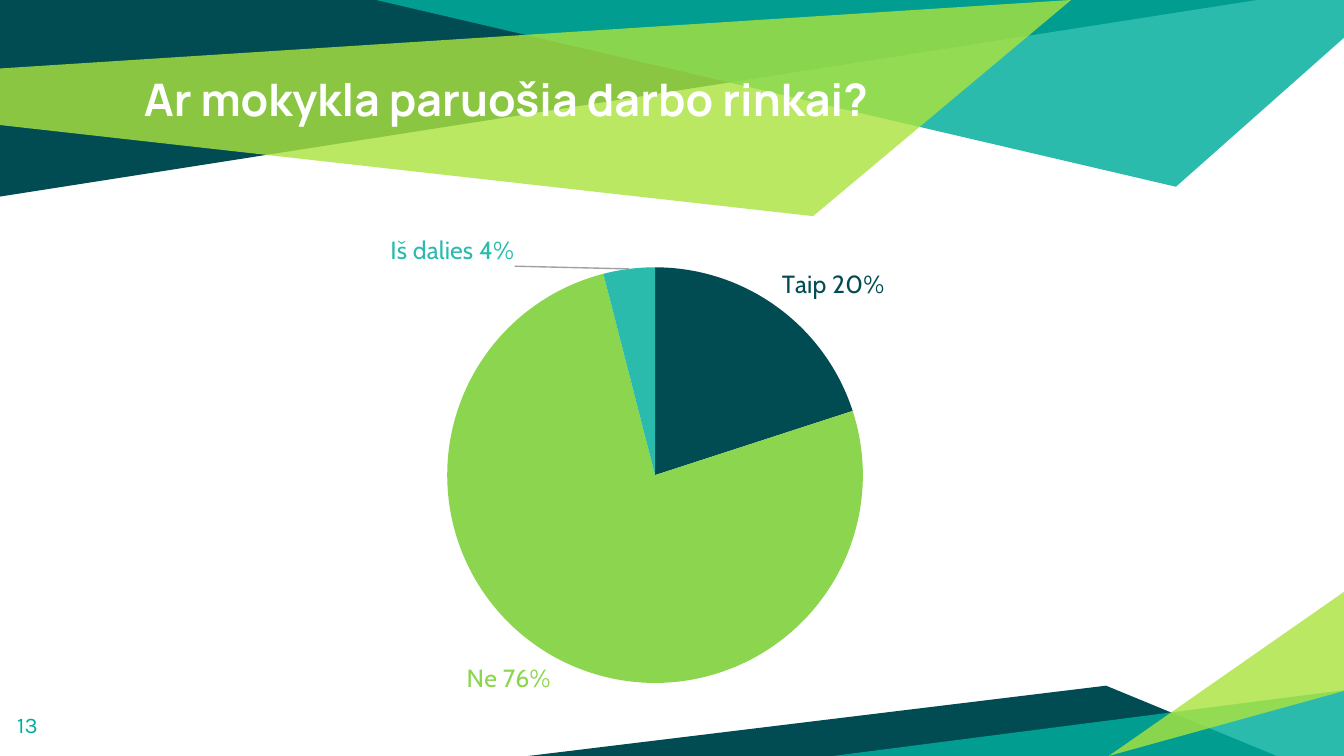
from dataclasses import dataclass

from lxml import etree
from pptx import Presentation
from pptx import util as u
from pptx.chart.data import CategoryChartData
from pptx.dml.color import RGBColor
from pptx.enum import chart as charts
from pptx.enum import text
from pptx.oxml import parse_xml
from pptx.oxml.ns import nsdecls, qn

WIDTH = u.Inches(10)
HEIGHT = u.Emu(WIDTH * 9 // 16)
PETROL = RGBColor(0x00, 0x4C, 0x52)
TEAL = RGBColor(0x00, 0xAE, 0x9D)
LIME = RGBColor(0xAB, 0xE3, 0x3F)
GREEN = RGBColor(0x8B, 0xD6, 0x4E)
AQUA = RGBColor(0x2A, 0xBB, 0xAD)
WHITE = RGBColor(0xFF, 0xFF, 0xFF)
GRAY = RGBColor(0xA0, 0xA0, 0xA0)


@dataclass(frozen=True)
class Box:
    """Percentages of the slide's width and height."""
    left: float
    top: float
    width: float
    height: float

    def lengths(self) -> tuple:
        return (across(self.left), down(self.top),
                across(self.width), down(self.height))


@dataclass(frozen=True)
class Facet:
    """Corners in percentages of the slide's width and height."""
    corners: tuple
    color: RGBColor
    opacity: int = 100


@dataclass(frozen=True)
class Slice:
    name: str
    percent: int
    color: RGBColor
    label_shift: tuple = ()


FACETS = (
    Facet(((0, 0), (0, 26), (93.5, 0)), PETROL),
    Facet(((28, 0), (87.5, 24.7), (100, 5), (100, 0)), TEAL, 83),
    Facet(((0, 9.07), (0, 16.55), (60.5, 28.6), (79.7, 0)), LIME, 81),
    Facet(((39.3, 100), (95, 100), (82.3, 90.7)), PETROL),
    Facet(((100, 91.3), (100, 100), (62, 100)), TEAL, 83),
    Facet(((100, 91.4), (100, 78.3), (82.5, 100)), LIME, 81),
)
SLICES = (
    Slice("Taip", 20, PETROL),
    Slice("Ne", 76, GREEN),
    Slice("Iš dalies", 4, AQUA, (-0.14, 0.01)),
)
TITLE_BOX = Box(9.7, 7.75, 80.6, 16.7)
NUMBER_BOX = Box(0.3, 92.35, 6, 7.65)
CHART_BOX = Box(19.8, 27.9, 60.3, 67.9)


def across(percent: float) -> int:
    return round(WIDTH * percent / 100)


def down(percent: float) -> int:
    return round(HEIGHT * percent / 100)


def set_font(font, name: str, size: float, color: RGBColor, bold: bool = False) -> None:
    font.name, font.size, font.bold = name, u.Pt(size), bold
    font.color.rgb = color


def draw_facet(slide, facet: Facet) -> None:
    points = [(across(x), down(y)) for x, y in facet.corners]
    builder = slide.shapes.build_freeform(*points[0])
    builder.add_line_segments(points[1:], close=True)
    shape = builder.convert_to_shape()
    shape.shadow.inherit = False
    shape.line.fill.background()
    shape.fill.solid()
    shape.fill.fore_color.rgb = facet.color
    if facet.opacity < 100:
        color = shape.fill._xPr.find(qn("a:solidFill"))[0]
        etree.SubElement(color, qn("a:alpha"), val=str(facet.opacity * 1000))


def write_text(shape, box: Box, words: str, **font) -> None:
    shape.left, shape.top, shape.width, shape.height = box.lengths()
    frame = shape.text_frame
    frame.text = words
    frame.word_wrap = True
    frame.auto_size = text.MSO_AUTO_SIZE.NONE
    frame.vertical_anchor = text.MSO_ANCHOR.TOP
    frame.margin_left = frame.margin_right = u.Inches(0.1)
    frame.margin_top = frame.margin_bottom = u.Inches(0.1)
    paragraph = frame.paragraphs[0]
    paragraph.alignment = text.PP_ALIGN.LEFT
    set_font(paragraph.font, **font)


def manual_layout(**settings):
    children = "".join(f'<c:{name} val="{value}"/>' for name, value in settings.items())
    return parse_xml(f'<c:layout {nsdecls("c")}><c:manualLayout>'
                     f'{children}</c:manualLayout></c:layout>')


def leader_lines(color: RGBColor):
    return parse_xml(f'<c:leaderLines {nsdecls("c", "a")}><c:spPr><a:ln w="9525">'
                     f'<a:solidFill><a:srgbClr val="{color}"/></a:solidFill>'
                     '</a:ln></c:spPr></c:leaderLines>')


def draw_pie(slide, box: Box, slices: tuple) -> None:
    data = CategoryChartData()
    data.categories = [part.name for part in slices]
    data.add_series("Series 1", [part.percent for part in slices])
    chart = slide.shapes.add_chart(
        charts.XL_CHART_TYPE.PIE, *box.lengths(), data).chart
    chart.has_legend = chart.has_title = False
    chart.font.name, chart.font.size = "Cabin", u.Pt(10)
    plot = chart.plots[0]
    plot.vary_by_categories = True
    series = plot.series[0]
    labels = series.data_labels
    labels.show_category_name = True
    labels.show_value = False
    labels.position = charts.XL_LABEL_POSITION.OUTSIDE_END
    set_font(labels.font, "Cabin", 13.3, GREEN)
    labels._element.append(leader_lines(GRAY))
    for index, part in enumerate(slices):
        point = series.points[index]
        point.format.fill.solid()
        point.format.fill.fore_color.rgb = part.color
        label = point.data_label
        label.text_frame.text = f"{part.name} {part.percent}%"
        set_font(label.text_frame.paragraphs[0].runs[0].font, "Cabin", 13.3, part.color)
        label.position = charts.XL_LABEL_POSITION.OUTSIDE_END
        if part.label_shift:
            x, y = part.label_shift
            element = label._get_or_add_dLbl()
            element.find(qn("c:idx")).addnext(manual_layout(x=x, y=y))
    area = chart._chartSpace.chart.plotArea
    for layout in area.findall(qn("c:layout")):
        area.remove(layout)
    area.insert(0, manual_layout(layoutTarget="inner", xMode="edge", yMode="edge",
                                 x=0.22, y=0.11, w=0.52, h=0.81))


def main() -> None:
    presentation = Presentation()
    presentation.slide_width, presentation.slide_height = WIDTH, HEIGHT
    slide = presentation.slides.add_slide(presentation.slide_layouts[5])
    for facet in FACETS:
        draw_facet(slide, facet)
    title = slide.shapes.title
    slide.shapes._spTree.append(title._element)
    write_text(title, TITLE_BOX, "Ar mokykla paruošia darbo rinkai?",
               name="Manrope", size=24, color=WHITE, bold=True)
    number = slide.shapes.add_textbox(*NUMBER_BOX.lengths())
    write_text(number, NUMBER_BOX, "13", name="Karla", size=12, color=TEAL)
    draw_pie(slide, CHART_BOX, SLICES)
    presentation.save("out.pptx")


if __name__ == "__main__":
    main()
